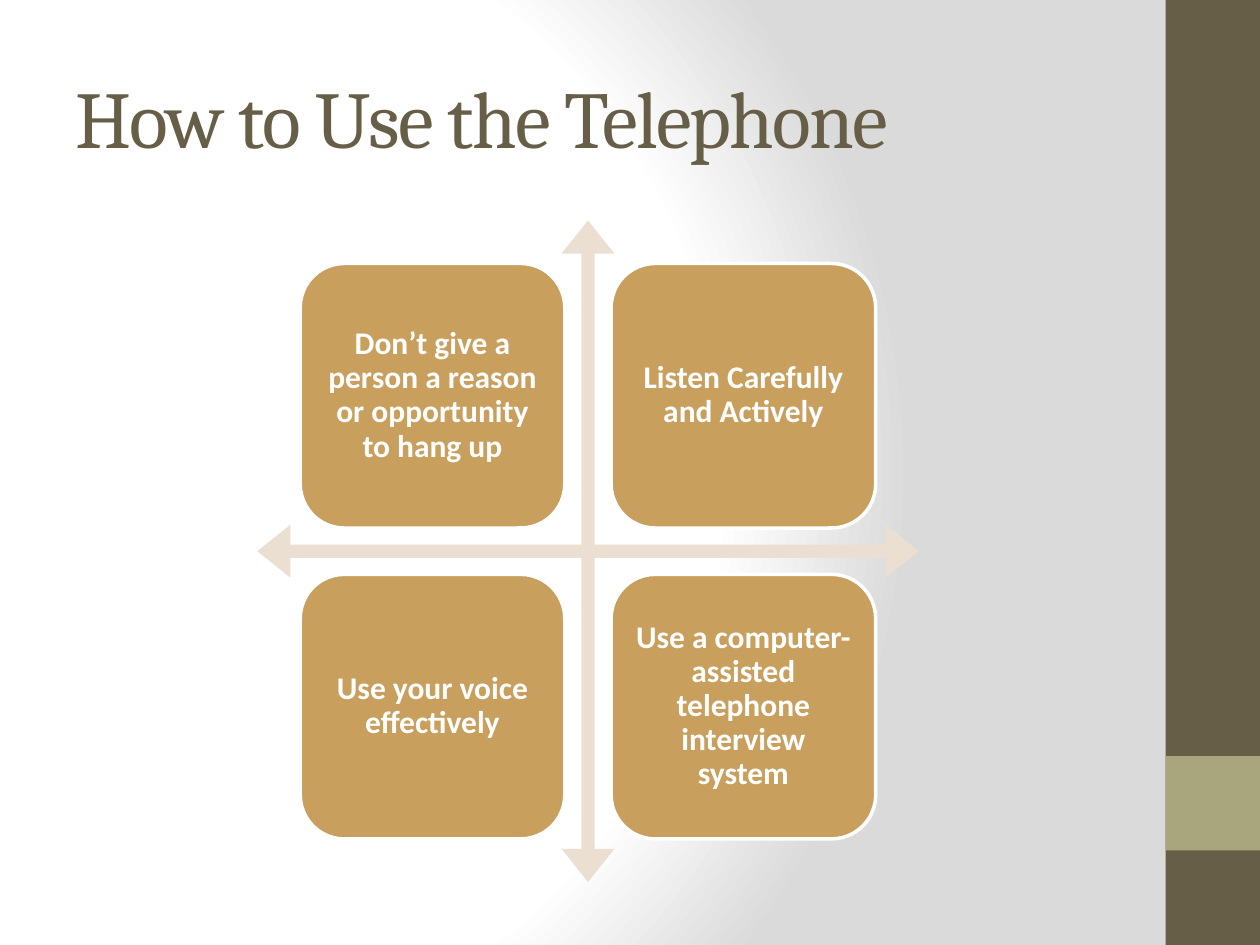
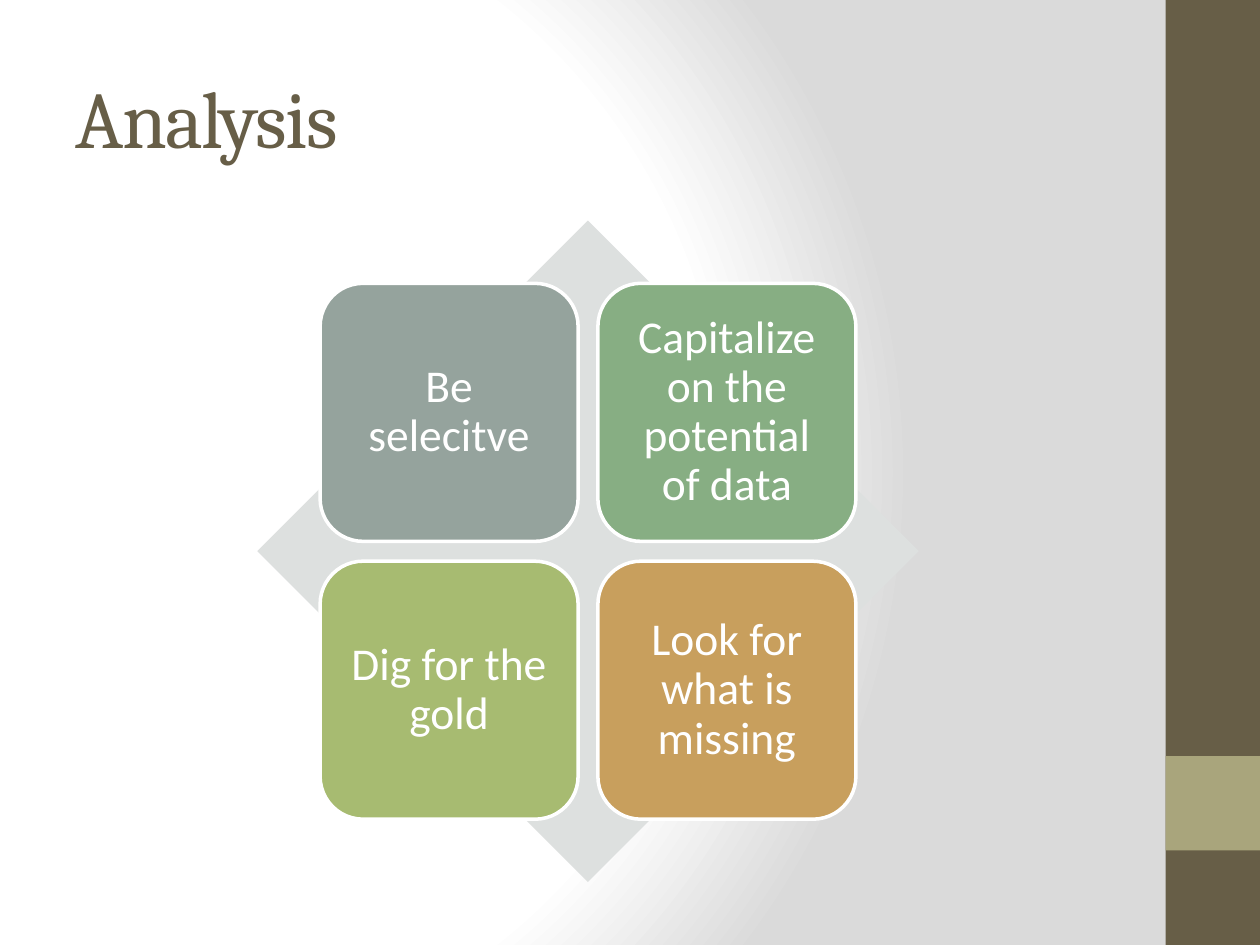
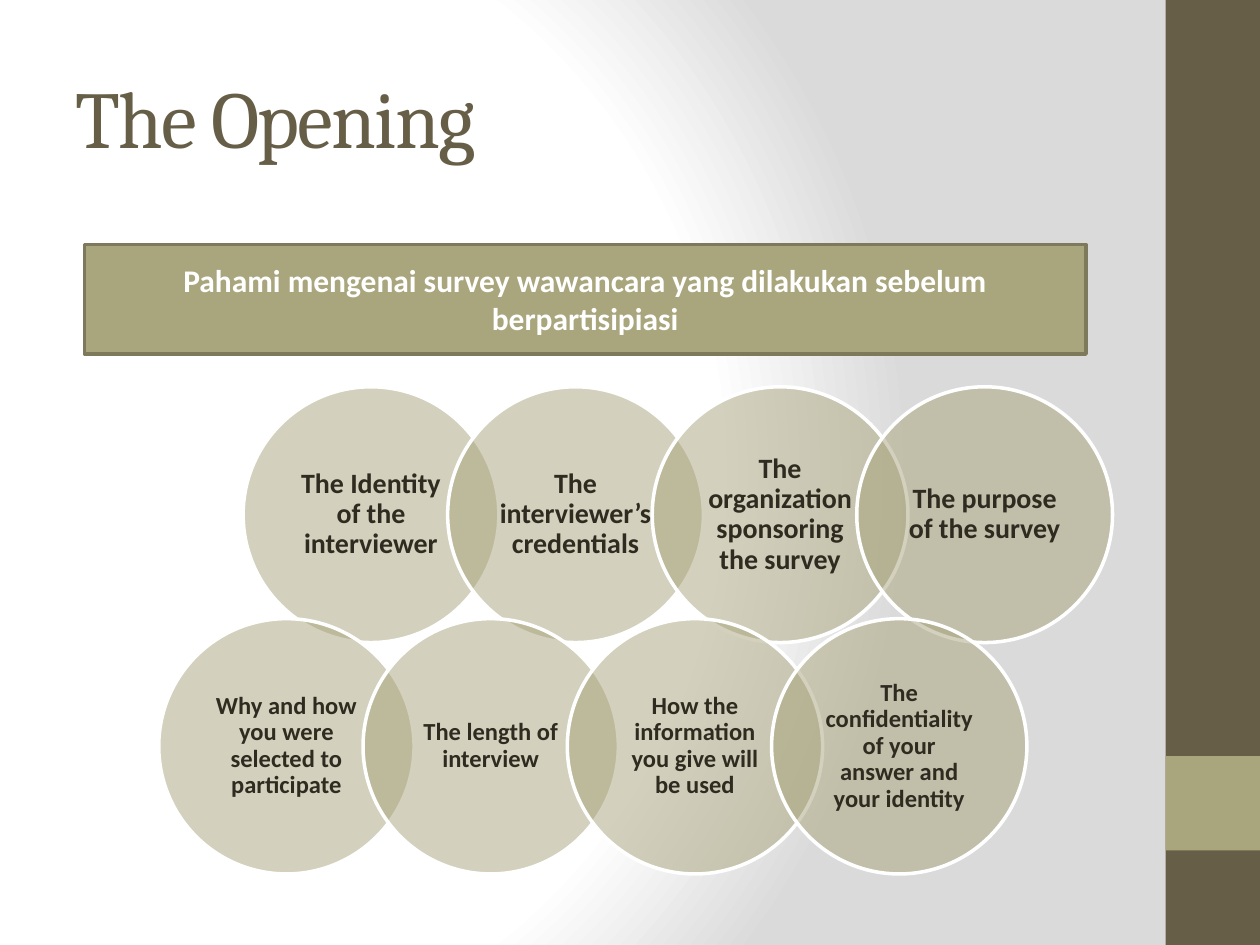
from collections import namedtuple
from dataclasses import dataclass

from lxml import etree
from pptx import Presentation, oxml
from pptx import util as u
from pptx.dml.color import RGBColor
from pptx.enum import shapes, text
from pptx.oxml import ns

Box = namedtuple("Box", "left top width height")
Face = namedtuple("Face", "size color bold pad")
Kind = shapes.MSO_SHAPE


@dataclass(frozen=True)
class Theme:
    """Colours, fonts and type sizes of the deck."""
    white: str = "FFFFFF"
    shade: str = "DADADA"
    brown: str = "675E47"
    olive: str = "A9A57C"
    moss: str = "7D7A5C"
    ink: str = "2F2B20"
    cream: str = "EBDFD2"
    mist: str = "DDE0DF"
    gold: str = "C89F5D"
    slate: str = "95A39D"
    green: str = "87AE83"
    lime: str = "A7BB71"
    head: str = "Cambria"
    body: str = "Calibri"
    title: int = 46
    large: int = 26
    label: int = 18
    note: int = 16
    small: int = 14
    edge: int = 2


T = Theme()
PAGE = Box(0, 0, 720, 540)
TITLE = Box(36, 21.6, 599.76, 90)
BAND = Box(666, 0, 54, 540)
QUAD = Box(147, 126, 378, 378)
BANNER = Box(48.24, 139.68, 572.4, 62.64)
UPPER = Box(138.96, 221.04, 496.8, 146.16)
LOWER = Box(90.72, 353.52, 496.08, 145.9)


def place(item, box):
    """Move an item to a box."""
    item.left, item.top, item.width, item.height = map(u.Pt, box)


def write(frame, words, font, face):
    """Add one styled run to the first paragraph."""
    run = frame.paragraphs[0].add_run()
    run.text = words
    run.font.name = font
    run.font.size = u.Pt(face.size)
    run.font.bold = face.bold
    run.font.color.rgb = RGBColor.from_string(face.color)
    return run


def draw(slide, kind, box, fill, line=None, alpha=None):
    """Add a flat preset shape."""
    shape = slide.shapes.add_shape(kind, *map(u.Pt, box))
    shape.shadow.inherit = False
    shape.fill.solid()
    shape.fill.fore_color.rgb = RGBColor.from_string(fill)
    if alpha:
        color = shape.element.find(".//" + ns.qn("a:srgbClr"))
        etree.SubElement(color, ns.qn("a:alpha"), val=str(alpha * 1000))
    if line:
        shape.line.color.rgb = RGBColor.from_string(line)
        shape.line.width = u.Pt(T.edge)
    else:
        shape.line.fill.background()
    return shape


def label(shape, words, face, pace=0.9):
    """Centre words inside a shape."""
    frame = shape.text_frame
    frame.word_wrap = True
    frame.vertical_anchor = text.MSO_ANCHOR.MIDDLE
    frame.margin_left = frame.margin_right = u.Pt(face.pad[0])
    frame.margin_top = frame.margin_bottom = u.Pt(face.pad[1])
    frame.paragraphs[0].alignment = text.PP_ALIGN.CENTER
    frame.paragraphs[0].line_spacing = pace
    write(frame, words, T.body, face)


def backdrop(master):
    """Give the master its round gradient."""
    master.background.fill.gradient()
    old = master.element.find(".//" + ns.qn("a:gradFill"))
    stops = "".join(
        f'<a:gs pos="{spot * 1000}"><a:srgbClr val="{color}"/></a:gs>'
        for spot, color in ((0, T.white), (75, T.white), (100, T.shade)))
    old.getparent().replace(old, oxml.parse_xml(
        f'<a:gradFill {ns.nsdecls("a")} rotWithShape="1"><a:gsLst>{stops}</a:gsLst>'
        '<a:path path="circle"><a:fillToRect l="20000" t="50000" r="100000" b="50000"/>'
        '</a:path></a:gradFill>'))


def bands(slide, master, box):
    """Put the side band and its accent on the master."""
    accent = Box(box.left, box.top + box.height * 0.8, box.width, box.width)
    for part, fill in ((box, T.brown), (accent, T.olive)):
        shape = draw(slide, Kind.RECTANGLE, part, fill)
        master.shapes.element.append(shape.element)


def start(deck, words):
    """Add a slide with its title."""
    slide = deck.slides.add_slide(deck.slide_layouts[5])
    title = slide.shapes.title
    place(title, TITLE)
    frame = title.text_frame
    frame.auto_size = text.MSO_AUTO_SIZE.NONE
    frame.word_wrap = True
    frame.vertical_anchor = text.MSO_ANCHOR.MIDDLE
    frame.paragraphs[0].alignment = text.PP_ALIGN.LEFT
    run = write(frame, words, T.head, Face(T.title, T.brown, False, None))
    run.font._element.set("spc", "-100")
    return slide


def quad(slide, box, share, inset, cards, face):
    """Lay four cards over a square box."""
    side = box.width * share
    near = box.width * inset
    far = box.width - near - side
    for spot, (words, fill) in enumerate(cards):
        row, col = divmod(spot, 2)
        part = Box(box.left + (near, far)[col], box.top + (near, far)[row], side, side)
        label(draw(slide, Kind.ROUNDED_RECTANGLE, part, fill, T.white), words, face)


def chain(slide, box, names, face):
    """Lay a row of overlapping circles along a box."""
    side = box.height
    step = (box.width - side) / (len(names) - 1)
    for spot, words in enumerate(names):
        part = Box(box.left + spot * step, box.top, side, side)
        label(draw(slide, Kind.OVAL, part, T.olive, T.white, 50), words, face)


def phone(slide):
    """Fill the telephone slide."""
    arrow = draw(slide, Kind.QUAD_ARROW, QUAD, T.cream)
    for spot, value in enumerate((0.02, 0.04, 0.05)):
        arrow.adjustments[spot] = value
    names = ("Don’t give a person a reason or opportunity to hang up",
             "Listen Carefully and Actively",
             "Use your voice effectively",
             "Use a computer-assisted telephone interview system")
    quad(slide, QUAD, 0.4, 0.065, [(words, T.gold) for words in names],
         Face(T.label, T.white, True, (5, 5)))


def study(slide):
    """Fill the analysis slide."""
    draw(slide, Kind.DIAMOND, QUAD, T.mist)
    cards = (("Be selecitve", T.slate),
             ("Capitalize on the potential of data", T.green),
             ("Dig for the gold", T.lime),
             ("Look for what is missing", T.gold))
    quad(slide, QUAD, 0.39, 0.095, cards, Face(T.large, T.white, False, (8, 8)))


def intro(slide):
    """Fill the opening slide."""
    chain(slide, UPPER, ("The Identity of the interviewer",
                         "The interviewer’s credentials",
                         "The organization sponsoring the survey",
                         "The purpose of the survey"),
          Face(T.note, T.ink, True, (8, 1.5)))
    banner = draw(slide, Kind.RECTANGLE, BANNER, T.olive, T.moss)
    label(banner, "Pahami mengenai survey wawancara yang dilakukan sebelum berpartisipiasi",
          Face(T.label, T.white, True, (7.2, 3.6)), 1.0)
    chain(slide, LOWER, ("Why and how you were selected to participate",
                         "The length of interview",
                         "How the information you give will be used",
                         "The confidentiality of your answer and your identity"),
          Face(T.small, T.ink, True, (8, 1.5)))


def main():
    """Build and save the deck."""
    deck = Presentation()
    deck.slide_width, deck.slide_height = u.Pt(PAGE.width), u.Pt(PAGE.height)
    master = deck.slide_master
    backdrop(master)
    for words, fill in (("How to Use the Telephone", phone),
                        ("Analysis", study),
                        ("The Opening", intro)):
        fill(start(deck, words))
    bands(deck.slides[0], master, BAND)
    deck.save("out.pptx")


if __name__ == "__main__":
    main()
